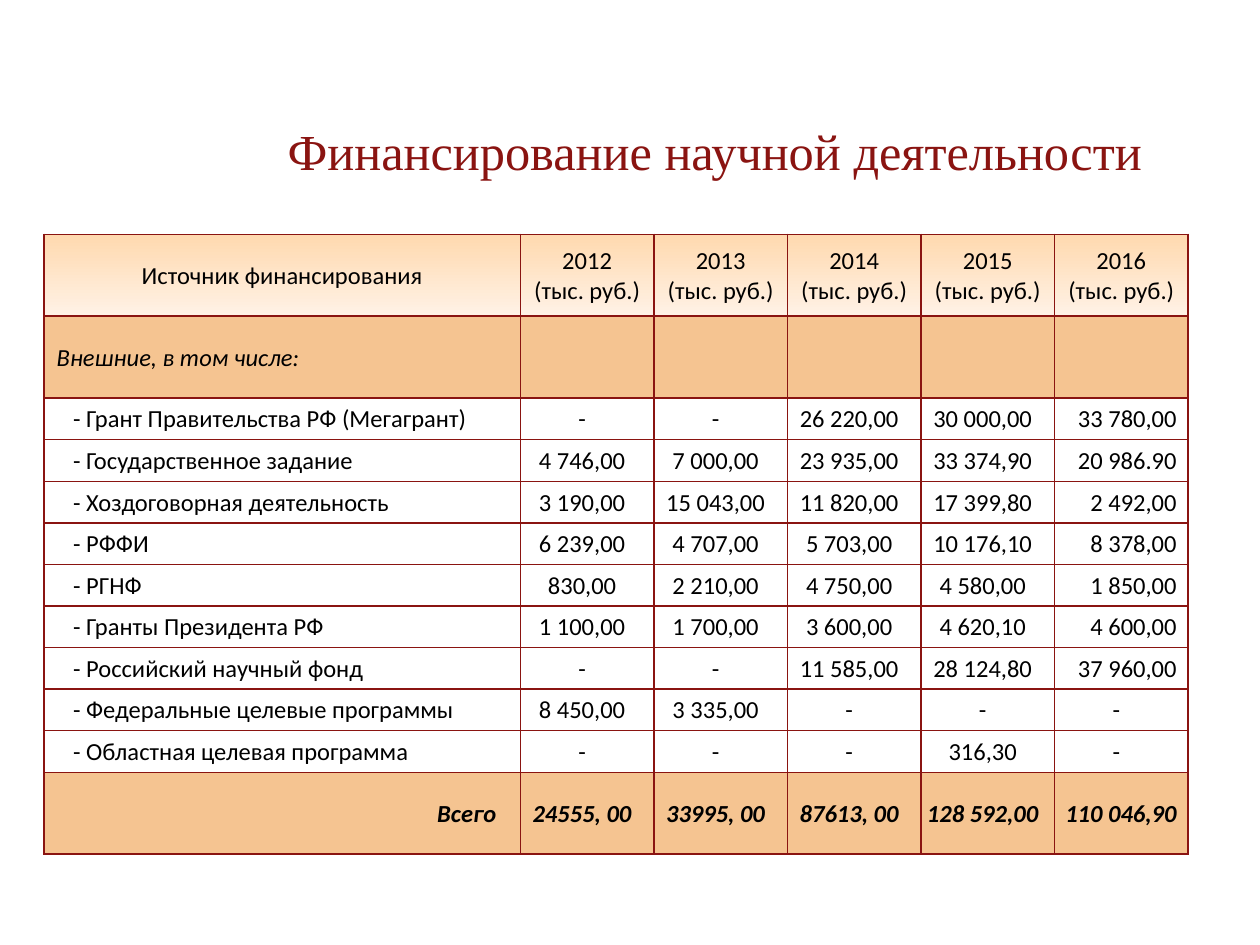
from lxml import etree
from pptx import Presentation
from pptx.dml.color import RGBColor
from pptx.enum import text
from pptx.oxml import ns
from pptx.util import Inches, Pt

COLORS = {
    "maroon": "8A1411",
    "text": "000000",
    "band": "F5C491",
    "head_top": "FFD9AF",
    "head_bottom": "FFF2E6",
}
LEFT, CENTER, RIGHT = text.PP_ALIGN.LEFT, text.PP_ALIGN.CENTER, text.PP_ALIGN.RIGHT

COL_WIDTHS = [3.78] + [1.06] * 5
ROW_HEIGHTS = [0.65, 0.65] + [0.33] * 9 + [0.65]

YEARS = [2012, 2013, 2014, 2015, 2016]
SOURCES = [
    ("Грант Правительства РФ (Мегагрант)", "-", "-", "26 220,00", "30 000,00", "33 780,00"),
    ("Государственное задание", "4 746,00", "7 000,00", "23 935,00", "33 374,90", "20 986.90"),
    ("Хоздоговорная деятельность", "3 190,00", "15 043,00", "11 820,00", "17 399,80", "2 492,00"),
    ("РФФИ", "6 239,00", "4 707,00", "5 703,00", "10 176,10", "8 378,00"),
    ("РГНФ", "830,00", "2 210,00", "4 750,00", "4 580,00", "1 850,00"),
    ("Гранты Президента РФ", "1 100,00", "1 700,00", "3 600,00", "4 620,10", "4 600,00"),
    ("Российский научный фонд", "-", "-", "11 585,00", "28 124,80", "37 960,00"),
    ("Федеральные целевые программы", "8 450,00", "3 335,00", "-", "-", "-"),
    ("Областная целевая программа", "-", "-", "-", "316,30", "-"),
]
TOTALS = ["24555, 00", "33995, 00", "87613, 00", "128 592,00", "110 046,90"]


def rgb(name):
    return RGBColor.from_string(COLORS[name])


def add_borders(cell):
    """Outline all four sides; must come before the cell's fill."""
    tcPr = cell._tc.get_or_add_tcPr()
    for side in ("a:lnL", "a:lnR", "a:lnT", "a:lnB"):
        ln = etree.SubElement(tcPr, ns.qn(side), w=str(Pt(1)))
        fill = etree.SubElement(ln, ns.qn("a:solidFill"))
        etree.SubElement(fill, ns.qn("a:srgbClr"), val=COLORS["maroon"])


def fill_header(cell):
    cell.fill.gradient()
    cell.fill.gradient_angle = 270
    for stop, name in zip(cell.fill.gradient_stops, ("head_top", "head_bottom")):
        stop.color.rgb = rgb(name)


def fill_band(cell):
    cell.fill.solid()
    cell.fill.fore_color.rgb = rgb("band")


def write_cell(cell, content, align=CENTER, left=0.01, right=0.01, bold=False, italic=False):
    cell.vertical_anchor = text.MSO_ANCHOR.MIDDLE
    cell.margin_left, cell.margin_right = Inches(left), Inches(right)
    cell.margin_top, cell.margin_bottom = Inches(0.01), 0
    tf = cell.text_frame
    tf.text = content
    for p in tf.paragraphs:
        p.alignment = align
        p.font.name, p.font.size = "Calibri", Pt(14)
        p.font.bold, p.font.italic = bold, italic
        p.font.color.rgb = rgb("text")


def write_amounts(cells, amounts, **style):
    """Centre the amounts, except those of the last year, which sit right."""
    for cell, amount in zip(cells, amounts):
        last = cell is cells[-1] and amount != "-"
        write_cell(cell, amount, RIGHT if last else CENTER, right=0.09, **style)


def add_title(slide, content):
    title = slide.shapes.title
    title.left, title.top = Inches(1.69), Inches(0.92)
    title.width, title.height = Inches(7.97), Inches(0.54)
    tf = title.text_frame
    tf.text = content
    tf.word_wrap = True
    tf.auto_size = text.MSO_AUTO_SIZE.NONE
    tf.vertical_anchor = text.MSO_ANCHOR.MIDDLE
    p = tf.paragraphs[0]
    p.alignment = CENTER
    p.font.name, p.font.size = "Times New Roman", Pt(28.8)
    p.font.color.rgb = rgb("maroon")


def add_funding_table(slide):
    table = slide.shapes.add_table(
        len(ROW_HEIGHTS), len(COL_WIDTHS), Inches(0.35), Inches(1.86),
        Inches(sum(COL_WIDTHS)), Inches(sum(ROW_HEIGHTS))).table
    table.horz_banding = False
    for column, width in zip(table.columns, COL_WIDTHS):
        column.width = Inches(width)
    for row, height in zip(table.rows, ROW_HEIGHTS):
        row.height = Inches(height)
    for cell in table.iter_cells():
        add_borders(cell)
        cell.fill.background()

    header, external, *sources, total = [list(row.cells) for row in table.rows]
    for cell in header:
        fill_header(cell)
    for cell in external + total:
        fill_band(cell)

    write_cell(header[0], "Источник финансирования")
    for cell, year in zip(header[1:], YEARS):
        write_cell(cell, f"{year}\n(тыс. руб.)")
    write_cell(external[0], "Внешние, в том числе:", LEFT, left=0.1, italic=True)
    for cells, (name, *amounts) in zip(sources, SOURCES):
        write_cell(cells[0], f"- {name}", LEFT, left=0.23)
        write_amounts(cells[1:], amounts)
    write_cell(total[0], "Всего", RIGHT, right=0.19, bold=True, italic=True)
    write_amounts(total[1:], TOTALS, bold=True, italic=True)


def main():
    prs = Presentation()
    prs.slide_width, prs.slide_height = Inches(10), Inches(7.5)
    slide = prs.slides.add_slide(prs.slide_layouts[5])
    add_funding_table(slide)
    add_title(slide, "Финансирование научной деятельности")
    prs.save("out.pptx")


if __name__ == "__main__":
    main()
